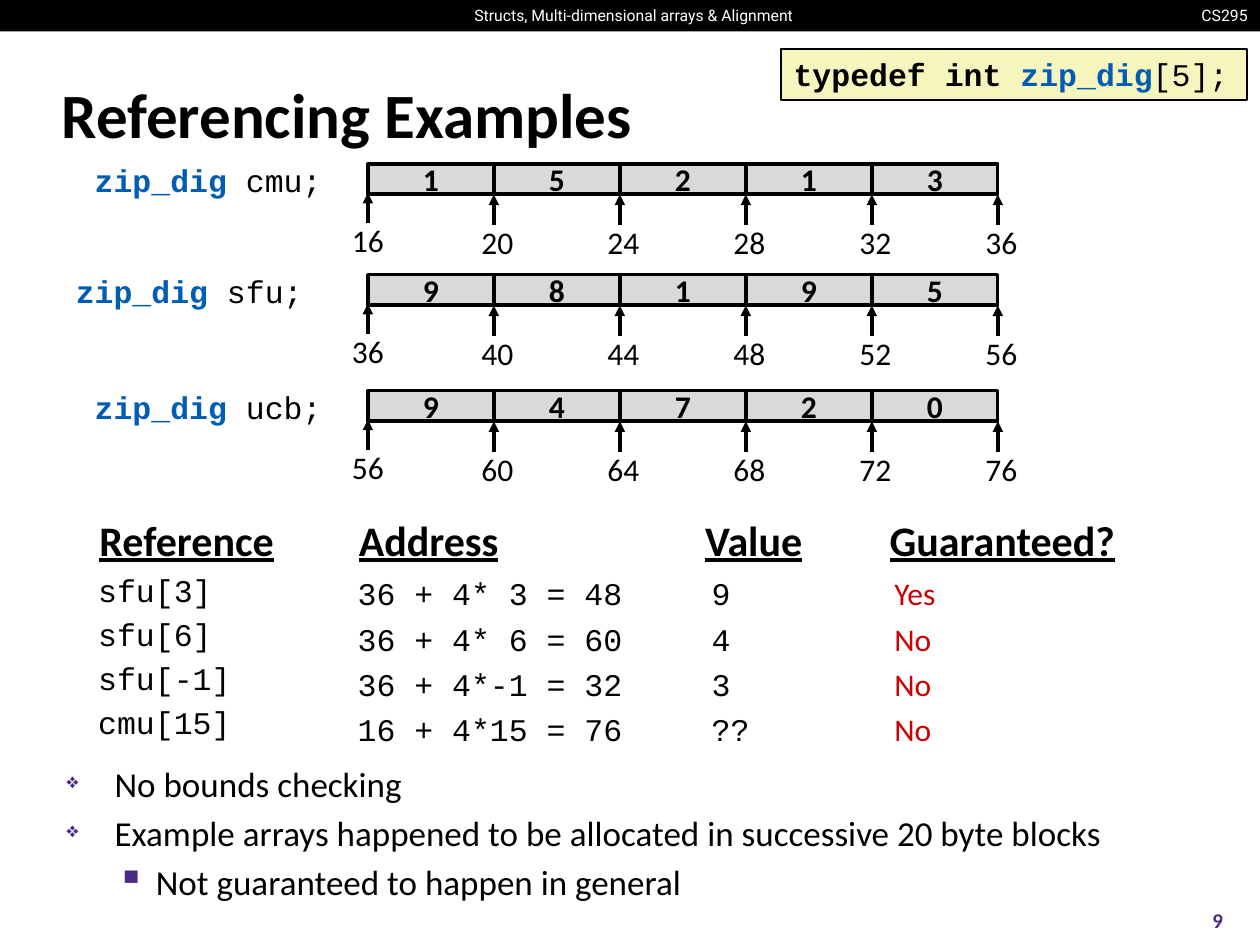
from lxml import etree
from pptx import Presentation
from pptx.dml.color import RGBColor
from pptx.enum.shapes import MSO_CONNECTOR, MSO_SHAPE
from pptx.enum.text import MSO_ANCHOR as ANCHOR, PP_ALIGN as ALIGN
from pptx.oxml.ns import qn
from pptx.util import Pt

BLACK = RGBColor(0x00, 0x00, 0x00)
WHITE = RGBColor(0xFF, 0xFF, 0xFF)
GREY = RGBColor(0xD9, 0xD9, 0xD9)
BLUE = RGBColor(0x01, 0x5D, 0xB3)
RED = RGBColor(0xCC, 0x00, 0x00)
PURPLE = RGBColor(0x4B, 0x2A, 0x85)
CREAM = RGBColor(0xF6, 0xF5, 0xBD)
SANS, MONO, HEAD = "Calibri", "Courier New", "Roboto"

ARRAYS = [
    ("cmu;", 16, 93.6, (1, 5, 2, 1, 3)),
    ("sfu; ", 36, 157, (9, 8, 1, 9, 5)),
    ("ucb;", 56, 223.2, (9, 4, 7, 2, 0)),
]
HEADINGS = ["Reference", "Address", "Value", "Guaranteed?"]
HEADING_TABS = (27.4, 175.7, 373.5, 479)
REFERENCES = [
    ("sfu[3]", "36 + 4* 3 = 48", "9", "Yes"),
    ("sfu[6]", "36 + 4* 6 = 60", "4", "No"),
    ("sfu[-1]", "36 + 4*-1 = 32", "3", "No"),
    ("cmu[15]", "16 + 4*15 = 76", "??", "No"),
]
RESULT_TABS = (202.3, 306.7)
NOTES = [
    (0, "No bounds checking"),
    (0, "Example arrays happened to be allocated in successive 20 byte blocks"),
    (1, "Not guaranteed to happen in general"),
]
BULLETS = [("❖", 60, 27.4, -27.4), ("▪", 110, 51, -22.3)]
CELL_LEFT, CELL_W, CELL_H = 210.2, 72, 17.3


def style(r, size, color=BLACK, font=SANS, bold=False):
    r.font.size, r.font.name, r.font.bold = Pt(size), font, bold
    r.font.color.rgb = color


def add_run(p, text, size, **kw):
    r = p.add_run()
    r.text = text
    style(r, size, **kw)
    return r


def add_box(shapes, x, y, w, h, text="", size=18, align=ALIGN.LEFT,
            anchor=ANCHOR.TOP, wrap=True, **kw):
    tf = shapes.add_textbox(Pt(x), Pt(y), Pt(w), Pt(h)).text_frame
    tf.word_wrap, tf.vertical_anchor = wrap, anchor
    p = tf.paragraphs[0]
    p.alignment = align
    if text:
        p.text = text
        style(p.runs[0], size, **kw)
    return tf


def add_rect(shapes, x, y, w, h, fill, line=0):
    sp = shapes.add_shape(MSO_SHAPE.RECTANGLE, Pt(x), Pt(y), Pt(w), Pt(h))
    sp.shadow.inherit = False
    sp.fill.solid()
    sp.fill.fore_color.rgb = fill
    if line:
        sp.line.color.rgb, sp.line.width = BLACK, Pt(line)
    else:
        sp.line.fill.background()
    return sp


def add_arrow(shapes, x, y_from, y_to):
    c = shapes.add_connector(MSO_CONNECTOR.STRAIGHT, Pt(x), Pt(y_from), Pt(x), Pt(y_to))
    c.line.color.rgb, c.line.width = BLACK, Pt(2)
    etree.SubElement(c.line._get_or_add_ln(), qn("a:tailEnd"), type="triangle")
    etree.SubElement(c._element.spPr, qn("a:effectLst"))


def next_paragraph(tf):
    return tf.paragraphs[0] if not tf.paragraphs[0].runs else tf.add_paragraph()


def space_before(p):
    node = etree.SubElement(p._p.get_or_add_pPr(), qn("a:spcBef"))
    etree.SubElement(node, qn("a:spcPct"), val="20000")


def set_indent(p, left, first):
    pPr = p._p.get_or_add_pPr()
    pPr.set("marL", str(Pt(left)))
    pPr.set("indent", str(Pt(first)))


def set_bullet(p, char, percent):
    pPr = p._p.get_or_add_pPr()
    color = etree.SubElement(pPr, qn("a:buClr"))
    etree.SubElement(color, qn("a:srgbClr"), val=str(PURPLE))
    etree.SubElement(pPr, qn("a:buSzPct"), val=str(percent * 1000))
    etree.SubElement(pPr, qn("a:buChar"), char=char)


def set_tabs(p, stops):
    tabs = etree.SubElement(p._p.get_or_add_pPr(), qn("a:tabLst"))
    for stop in stops:
        etree.SubElement(tabs, qn("a:tab"), pos=str(Pt(stop)), algn="l")


def add_array(s, name, start, top, digits):
    tf = add_box(s.shapes, 15.1, top - 5, 175.7, 29, align=ALIGN.RIGHT)
    p = tf.paragraphs[0]
    add_run(p, "zip_dig ", 18, color=BLUE, font=MONO, bold=True)
    add_run(p, name, 18, font=MONO)

    shapes = s.shapes.add_group_shape().shapes
    for i, digit in enumerate(digits):
        sp = add_rect(shapes, CELL_LEFT + i * CELL_W, top, CELL_W, CELL_H, GREY, 2)
        tf = sp.text_frame
        tf.word_wrap, tf.vertical_anchor = False, ANCHOR.MIDDLE
        tf.text = str(digit)
        tf.paragraphs[0].alignment = ALIGN.CENTER
        style(tf.paragraphs[0].runs[0], 18, bold=True)
    for i in range(len(digits) + 1):
        x = CELL_LEFT + i * CELL_W
        dx, dy = (2, 1) if i else (0, 0)
        add_arrow(shapes, x, top + 34 + dy, top + 16.6 + dy)
        add_box(shapes, x - 39 + dx, top + 29.4 + dy, 78, 29,
                str(start + 4 * i), align=ALIGN.CENTER)


def add_references(s):
    tf = add_box(s.shapes, 22.3, 290.2, 654.5, 237.6)
    p = tf.paragraphs[0]
    space_before(p)
    set_tabs(p, HEADING_TABS)
    for heading in HEADINGS:
        add_run(p, "\t", 24, bold=True)
        add_run(p, heading, 24, bold=True).font.underline = True
    results = add_box(s.shapes, 197.3, 320.4, 465, 111)
    for reference, address, value, guaranteed in REFERENCES:
        p = tf.add_paragraph()
        p.level = 1
        set_indent(p, 44, -17.3)
        space_before(p)
        add_run(p, reference, 18, font=MONO)
        p = next_paragraph(results)
        p.line_spacing = 1.2
        set_tabs(p, RESULT_TABS)
        add_run(p, f"{address}\t{value}\t", 18, font=MONO)
        add_run(p, guaranteed, 18, color=RED)


def add_notes(s):
    tf = add_box(s.shapes, 31, 432, 659, 93.6)
    for level, text in NOTES:
        char, percent, left, first = BULLETS[level]
        p = next_paragraph(tf)
        p.level = level
        set_indent(p, left, first)
        space_before(p)
        set_bullet(p, char, percent)
        add_run(p, text, 20)


def main():
    prs = Presentation()
    prs.slide_width, prs.slide_height = Pt(720), Pt(540)
    s = prs.slides.add_slide(prs.slide_layouts[6])

    add_rect(s.shapes, 0, 0, 720, 18, BLACK)
    add_box(s.shapes, 677.5, 0, 42.5, 18, "CS295", 9, ALIGN.RIGHT,
            wrap=False, color=WHITE, font=HEAD)
    add_box(s.shapes, 260.5, 0, 203, 18, "Structs, Multi-dimensional arrays & Alignment",
            9, ALIGN.CENTER, wrap=False, color=WHITE, font=HEAD)
    add_box(s.shapes, 28.1, 34.6, 661.7, 59.8, "Referencing Examples", 36,
            anchor=ANCHOR.MIDDLE, bold=True)
    add_box(s.shapes, 671.8, 511.2, 48.2, 28.8, "9", 12, ALIGN.CENTER,
            ANCHOR.MIDDLE, color=PURPLE, bold=True)

    for array in ARRAYS:
        add_array(s, *array)
    add_references(s)

    tf = add_rect(s.shapes, 446.4, 28.1, 266.4, 29, CREAM, 1).text_frame
    tf.vertical_anchor = ANCHOR.TOP
    p = tf.paragraphs[0]
    p.alignment = ALIGN.LEFT
    add_run(p, "typedef int ", 18, font=MONO, bold=True)
    add_run(p, "zip_dig", 18, color=BLUE, font=MONO, bold=True)
    add_run(p, "[5];", 18, font=MONO)

    add_notes(s)
    prs.save("out.pptx")


if __name__ == "__main__":
    main()
